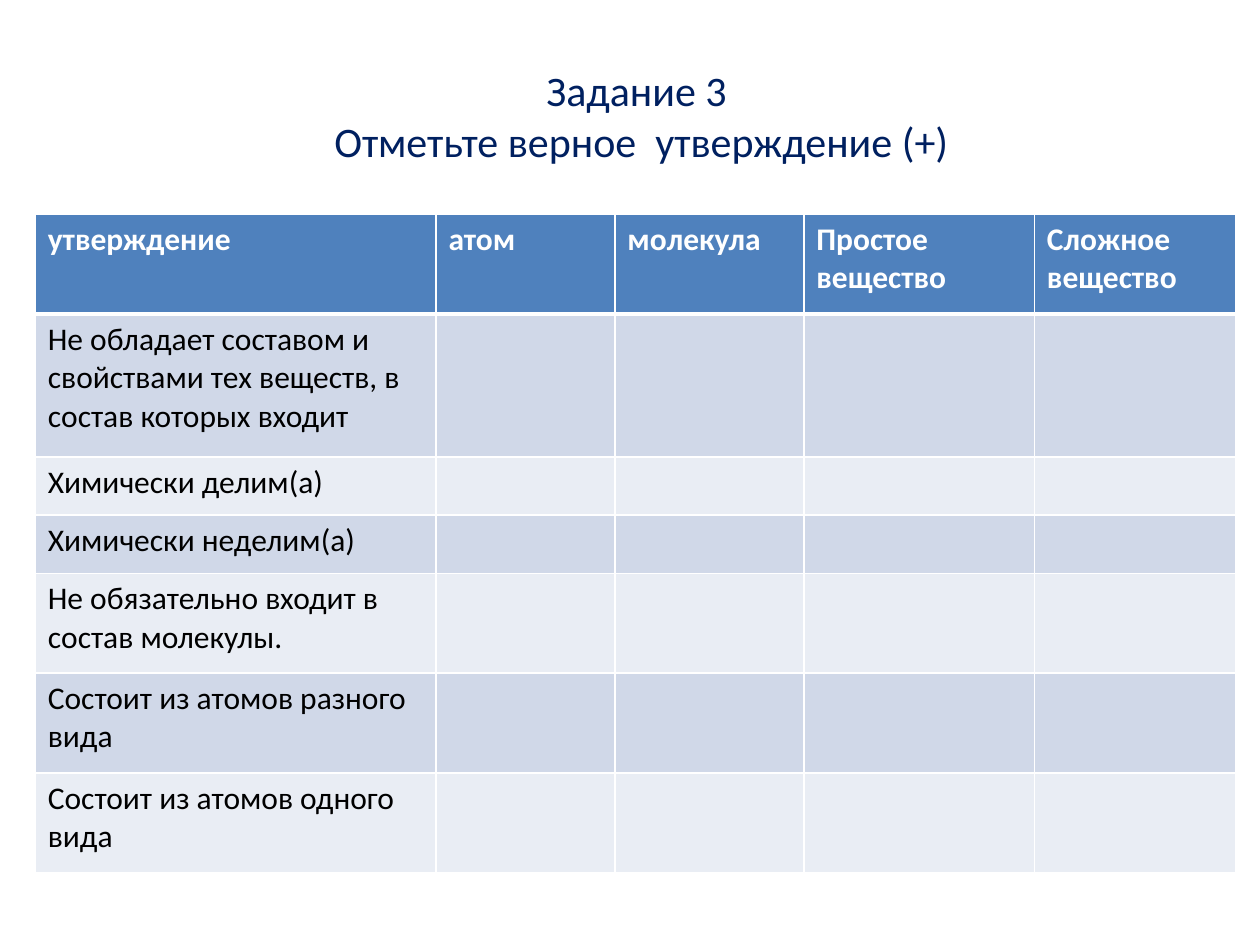
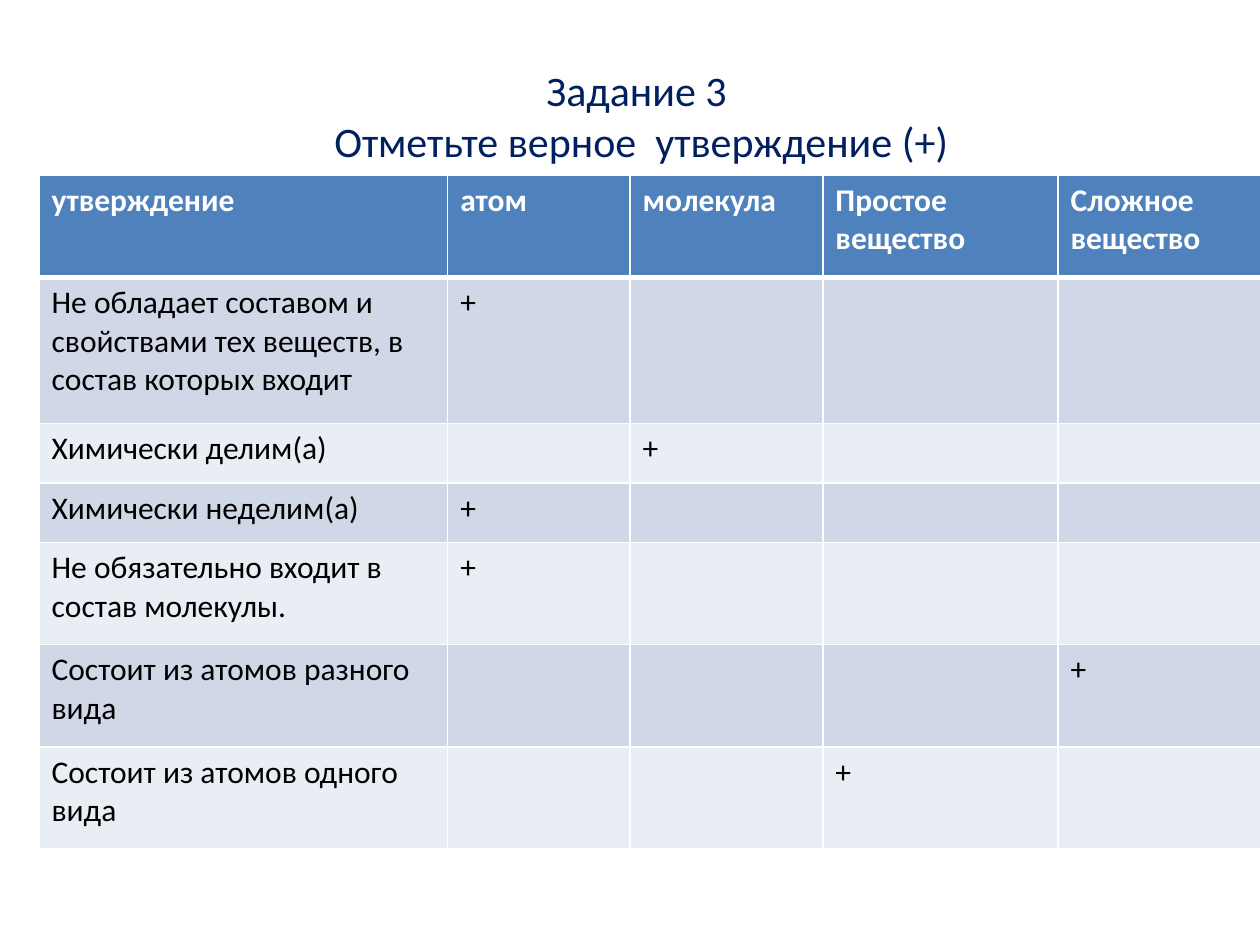
from dataclasses import dataclass

from lxml import etree
from pptx import Presentation
from pptx.dml.color import RGBColor
from pptx.enum.text import MSO_ANCHOR, PP_ALIGN
from pptx.oxml.ns import qn
from pptx.util import Inches, Pt

CENTER, MIDDLE = PP_ALIGN.CENTER, MSO_ANCHOR.MIDDLE

TITLE = "Задание 3 \vОтметьте верное  утверждение (+)"
HEADERS = ["утверждение", "атом", "молекула", "Простое вещество", "Сложное вещество"]
# Each statement with the column its "+" belongs to
STATEMENTS = [
    ("Не обладает составом и свойствами тех веществ, в состав которых входит", "атом"),
    ("Химически делим(а)", "молекула"),
    ("Химически неделим(а)", "атом"),
    ("Не обязательно входит в состав молекулы.", "атом"),
    ("Состоит из атомов разного вида", "Сложное вещество"),
    ("Состоит из атомов одного вида", "Простое вещество"),
]
SLIDES = [
    {"box": (0.28, 1.7, 9.53, 5.23), "answers": False},
    {"box": (0.31, 1.39, 9.72, 5.35), "answers": True},
]
TITLE_BOX = (0.59, 0.29, 9, 1.25)
COL_SHARES = [3.18, 1.42, 1.5, 1.83, 1.6]
ROW_SHARES = [0.79, 1.13, 0.46, 0.46, 0.79, 0.79, 0.79]


@dataclass(frozen=True)
class Theme:
    font: str = "Calibri"
    title: str = "002060"
    header: str = "4F81BD"
    header_text: str = "FFFFFF"
    text: str = "000000"
    bands: tuple = ("D0D8E8", "E9EDF4")
    border: str = "FFFFFF"
    title_size: int = 24
    table_size: int = 18
    thin: int = 1
    thick: int = 3


THEME = Theme()


def format_runs(tf, size, color, bold=False):
    for p in tf.paragraphs:
        for r in p.runs:
            r.font.name, r.font.size, r.font.bold = THEME.font, Pt(size), bold
            r.font.color.rgb = RGBColor.from_string(color)


def add_title(slide):
    sp = slide.shapes.title
    sp.left, sp.top, sp.width, sp.height = map(Inches, TITLE_BOX)
    tf = sp.text_frame
    tf.text = TITLE
    tf.vertical_anchor = MIDDLE
    tf.paragraphs[0].alignment = CENTER
    format_runs(tf, THEME.title_size, THEME.title)


def set_borders(cell, row):
    """Thin lines all round, with a thick one between header and body."""
    thick_side = {0: "B", 1: "T"}.get(row)
    tc_pr = cell._tc.get_or_add_tcPr()
    for side in "LRTB":
        width = THEME.thick if side == thick_side else THEME.thin
        ln = etree.SubElement(tc_pr, qn(f"a:ln{side}"), w=str(Pt(width)))
        fill = etree.SubElement(ln, qn("a:solidFill"))
        etree.SubElement(fill, qn("a:srgbClr"), val=THEME.border)


def set_lengths(parts, shares, total):
    """Divide a total length among columns or rows; return each length."""
    return [(part, Inches(total * share / sum(shares))) for part, share in zip(parts, shares)]


def add_statement_table(slide, box, answers):
    rows = [HEADERS] + [
        [text] + ["+" if answers and name == answer else "" for name in HEADERS[1:]]
        for text, answer in STATEMENTS
    ]
    frame = slide.shapes.add_table(len(rows), len(HEADERS), *map(Inches, box))
    table = frame.table
    for column, width in set_lengths(table.columns, COL_SHARES, box[2]):
        column.width = width
    for row, height in set_lengths(table.rows, ROW_SHARES, box[3]):
        row.height = height

    for i, texts in enumerate(rows):
        is_header = i == 0
        fill = THEME.header if is_header else THEME.bands[(i - 1) % 2]
        color = THEME.header_text if is_header else THEME.text
        for j, text in enumerate(texts):
            cell = table.cell(i, j)
            set_borders(cell, i)
            cell.fill.solid()
            cell.fill.fore_color.rgb = RGBColor.from_string(fill)
            cell.text_frame.text = text
            format_runs(cell.text_frame, THEME.table_size, color, is_header)


def main():
    prs = Presentation()
    prs.slide_width, prs.slide_height = Inches(10), Inches(7.5)
    title_only = prs.slide_layouts[5]
    for content in SLIDES:
        slide = prs.slides.add_slide(title_only)
        add_title(slide)
        add_statement_table(slide, **content)
    prs.save("out.pptx")


if __name__ == "__main__":
    main()
